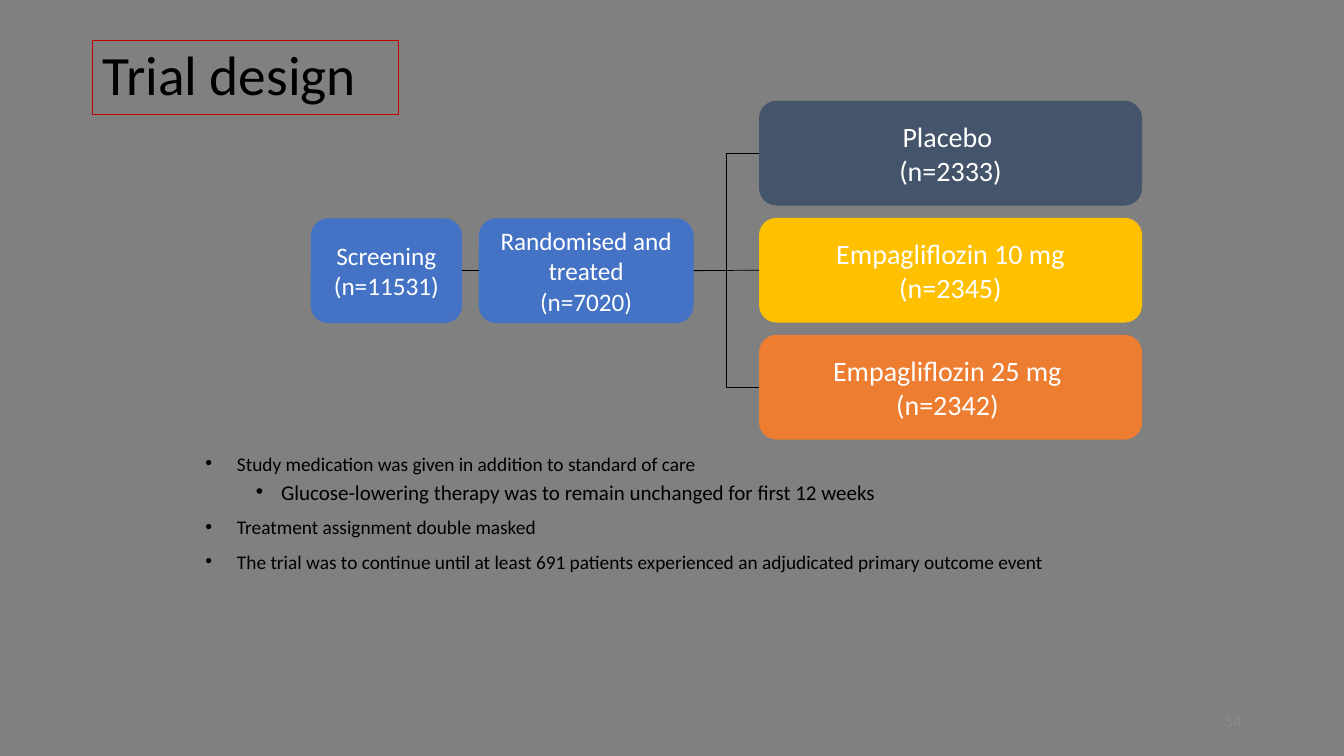
from lxml import etree
from pptx import Presentation
from pptx.dml.color import RGBColor
from pptx.enum.shapes import MSO_CONNECTOR, MSO_SHAPE
from pptx.enum.text import MSO_ANCHOR, PP_ALIGN
from pptx.oxml.ns import qn
from pptx.util import Pt

STRAIGHT, ELBOW = MSO_CONNECTOR.STRAIGHT, MSO_CONNECTOR.ELBOW
RECTANGLE, ROUNDED = MSO_SHAPE.RECTANGLE, MSO_SHAPE.ROUNDED_RECTANGLE
MIDDLE = MSO_ANCHOR.MIDDLE
LEFT, CENTER, RIGHT = PP_ALIGN.LEFT, PP_ALIGN.CENTER, PP_ALIGN.RIGHT

GREY = RGBColor(0x80, 0x80, 0x80)
PALE_GREY = RGBColor(0x8B, 0x8B, 0x8B)
BLACK = RGBColor(0x00, 0x00, 0x00)
WHITE = RGBColor(0xFF, 0xFF, 0xFF)
RED = RGBColor(0xC0, 0x00, 0x00)
BLUE = RGBColor(0x44, 0x72, 0xC4)
SLATE = RGBColor(0x44, 0x54, 0x6A)
GOLD = RGBColor(0xFF, 0xC0, 0x00)
ORANGE = RGBColor(0xED, 0x7D, 0x31)


def add_span(para, text, size, color):
    span = para.add_run()
    span.text = text
    span.font.name = "Calibri"
    span.font.size = Pt(size)
    span.font.color.rgb = color


def add_line(kind, start, end, width):
    line = page.shapes.add_connector(kind, *(Pt(value) for value in start + end))
    line.line.color.rgb = BLACK
    line.line.width = Pt(width)
    etree.SubElement(line._element.spPr, qn("a:effectLst"))
    return line


deck = Presentation()
deck.slide_width, deck.slide_height = Pt(960), Pt(540)
page = deck.slides.add_slide(deck.slide_layouts[6])
page.background.fill.solid()
page.background.fill.fore_color.rgb = GREY

title = page.shapes.add_shape(RECTANGLE, Pt(66.2), Pt(28.8), Pt(218.2), Pt(53))
title.shadow.inherit = False
title.fill.background()
title.line.color.rgb = RED
title.line.width = Pt(0.75)
title.text_frame.vertical_anchor = MIDDLE
para = title.text_frame.paragraphs[0]
para.alignment = LEFT
para.line_spacing = 0.9
add_span(para, "Trial design", 39.6, BLACK)

notes = [
    (0, "Study medication was given in addition to standard of care"),
    (1, "Glucose-lowering therapy was to remain unchanged for first 12 weeks"),
    (0, "Treatment assignment double masked"),
    (0, "The trial was to continue until at least 691 patients experienced "
        "an adjudicated primary outcome event"),
]
level_styles = [(13.8, 10, 22.5, 22.5), (15, 5, 54, 18)]
body = page.shapes.add_textbox(Pt(139.7), Pt(324), Pt(694.8), Pt(95.8)).text_frame
body.word_wrap = True
for index, (level, text) in enumerate(notes):
    size, before, margin, hanging = level_styles[level]
    para = body.add_paragraph() if index else body.paragraphs[0]
    para.level = level
    para.line_spacing = 0.7
    para.space_before, para.space_after = Pt(before), Pt(3)
    properties = para._p.get_or_add_pPr()
    properties.set("marL", str(Pt(margin)))
    properties.set("indent", str(-Pt(hanging)))
    etree.SubElement(properties, qn("a:buFont")).set("typeface", "Arial")
    etree.SubElement(properties, qn("a:buChar")).set("char", "•")
    add_span(para, text, size, BLACK)

ARM_LEFT, ARM_WIDTH, ARM_TOP, ARM_STEP = 542.2, 273.6, 72, 83.6
BOX_HEIGHT = 74.8
stages = [
    (222, 156, 108, BLUE, 18, 0, ["Screening", "(n=11531)"]),
    (342, 156, 153.4, BLUE, 18, 0, ["Randomised and treated", "(n=7020)"]),
]
arms = [
    (SLATE, ["Placebo \n(n=2333)"]),
    (GOLD, ["Empagliflozin 10 mg", " (n=2345) "]),
    (ORANGE, ["Empagliflozin 25 mg ", "(n=2342) "]),
]
for index, (color, lines) in enumerate(arms):
    top = ARM_TOP + index * ARM_STEP
    stages.append((ARM_LEFT, top, ARM_WIDTH, color, 20, 3, lines))

boxes = []
for left, top, width, color, size, inset, lines in stages:
    box = page.shapes.add_shape(ROUNDED, Pt(left), Pt(top), Pt(width), Pt(BOX_HEIGHT))
    box.shadow.inherit = False
    box.fill.solid()
    box.fill.fore_color.rgb = color
    box.line.fill.background()
    frame = box.text_frame
    frame.word_wrap = True
    frame.vertical_anchor = MIDDLE
    frame.margin_left = frame.margin_right = Pt(inset)
    frame.margin_top = frame.margin_bottom = Pt(3)
    for index, text in enumerate(lines):
        para = frame.add_paragraph() if index else frame.paragraphs[0]
        para.alignment = CENTER
        for part_index, part in enumerate(text.split("\n")):
            if part_index:
                para.add_line_break()
            add_span(para, part, size, WHITE)
    boxes.append(box)

screening, randomised, *arm_boxes = boxes
middle = 156 + BOX_HEIGHT / 2
add_line(STRAIGHT, (330, middle), (339, middle), 0.75).begin_connect(screening, 3)
add_line(STRAIGHT, (333, middle), (342, middle), 0.75).end_connect(randomised, 1)
for index, kind in enumerate([ELBOW, STRAIGHT, ELBOW]):
    arm_middle = ARM_TOP + index * ARM_STEP + BOX_HEIGHT / 2
    branch = add_line(kind, (495.4, middle), (ARM_LEFT, arm_middle), 0.5)
    branch.begin_connect(randomised, 3)
    branch.end_connect(arm_boxes[index], 1)

number = page.shapes.add_textbox(Pt(678), Pt(500.5), Pt(216), Pt(28.8)).text_frame
number.word_wrap = True
number.vertical_anchor = MIDDLE
number.paragraphs[0].alignment = RIGHT
add_span(number.paragraphs[0], "54", 12, PALE_GREY)

deck.save("out.pptx")
